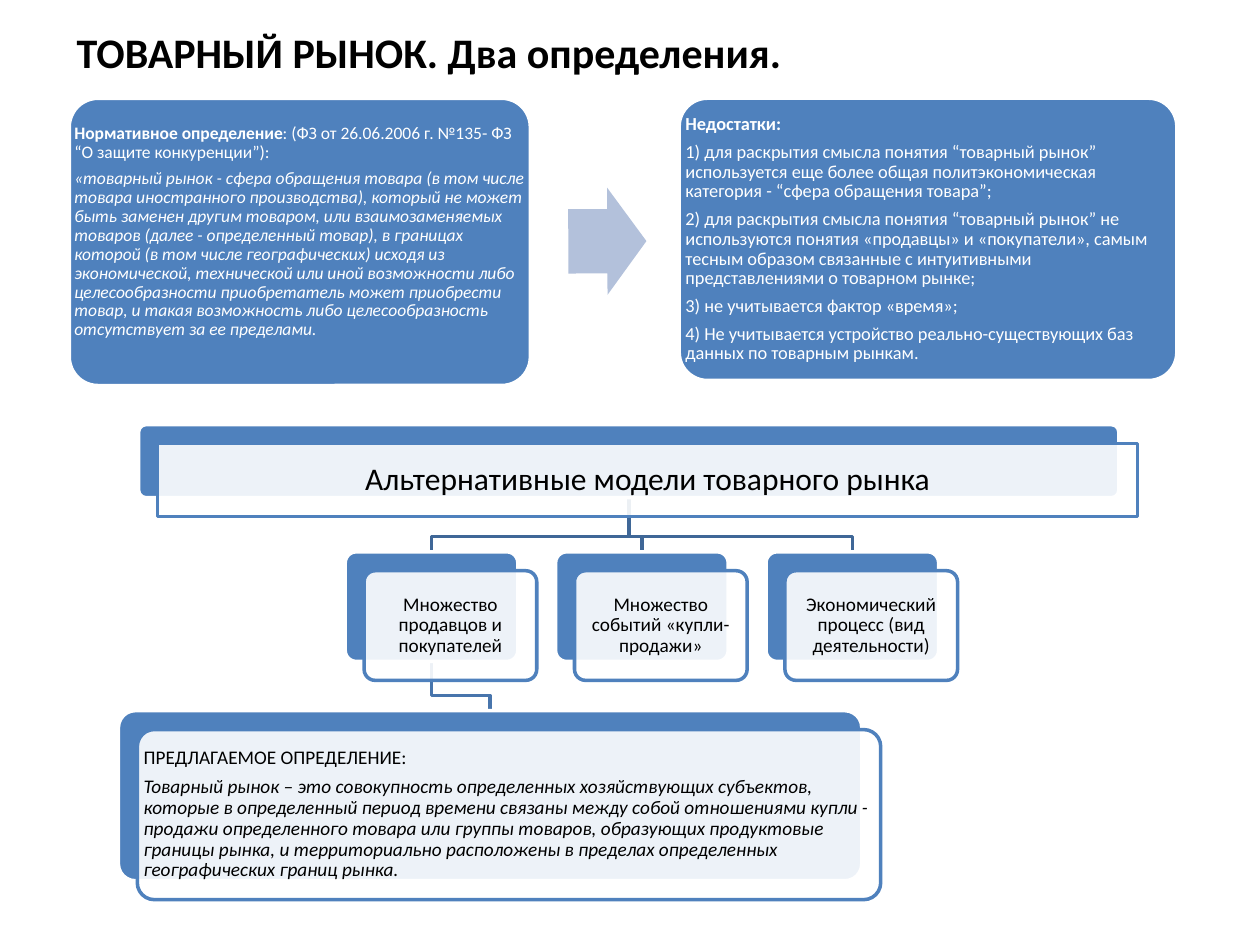
from lxml import etree
from pptx import Presentation
from pptx.dml.color import RGBColor
from pptx.enum.shapes import MSO_SHAPE as SHAPE
from pptx.enum.text import MSO_ANCHOR as ANCHOR, PP_ALIGN as ALIGN
from pptx.oxml.ns import qn
from pptx.util import Inches, Pt

BLUE, WHITE, BLACK = "4F81BD", "FFFFFF", "000000"
ARROW, BRANCH, SUBBRANCH = "B3C1DB", "3F6797", "4875AC"
OFFSET = 0.15  # shift of a card's front plate from its back plate

NORM = [
    [("Нормативное определение", "b"),
     (": (ФЗ от 26.06.2006 г. №135- ФЗ “О защите конкуренции”):", "")],
    [("«товарный рынок - сфера обращения товара (в том числе товара иностранного "
      "производства), который не может быть заменен другим товаром, или "
      "взаимозаменяемых товаров (далее - определенный товар), в границах которой "
      "(в том числе географических) исходя из экономической, технической или иной "
      "возможности либо целесообразности приобретатель может приобрести товар, и "
      "такая возможность либо целесообразность отсутствует за ее пределами.", "i")],
]
FLAWS = [
    [("Недостатки:", "b")],
    [("1) для раскрытия смысла понятия “товарный рынок” используется еще более "
      "общая политэкономическая категория - “сфера обращения товара”;", "")],
    [("2) для раскрытия смысла понятия “товарный рынок” не используются понятия "
      "«продавцы» и «покупатели», самым тесным образом связанные с интуитивными "
      "представлениями о товарном рынке;", "")],
    [("3) не учитывается фактор «время»;", "")],
    [("4) Не учитывается устройство реально-существующих баз данных по товарным "
      "рынкам.", "")],
]
MODELS = ["Множество продавцов и покупателей",
          "Множество событий «купли-продажи»",
          "Экономический процесс (вид деятельности)"]
PROPOSAL = [
    [("ПРЕДЛАГАЕМОЕ ОПРЕДЕЛЕНИЕ:", "")],
    [("Товарный рынок – это совокупность определенных хозяйствующих субъектов, "
      "которые в определенный период времени связаны между собой отношениями купли "
      "- продажи определенного товара или группы товаров, образующих продуктовые "
      "границы рынка, и территориально расположены в пределах определенных "
      "географических границ рынка.", "i")],
]


def rgb(value):
    return RGBColor.from_string(value)


def add_plate(s, box, fill, line=None, kind=SHAPE.ROUNDED_RECTANGLE, alpha=None):
    """Filled shape; alpha is the opacity in percent."""
    sp = s.shapes.add_shape(kind, *map(Inches, box))
    sp.shadow.inherit = False
    if kind == SHAPE.ROUNDED_RECTANGLE:
        sp.adjustments[0] = 0.1
    sp.fill.solid()
    sp.fill.fore_color.rgb = rgb(fill)
    if alpha:
        clr = sp._element.spPr.find(qn("a:solidFill")).find(qn("a:srgbClr"))
        etree.SubElement(clr, qn("a:alpha")).set("val", str(alpha * 1000))
    if line:
        sp.line.color.rgb = rgb(line)
        sp.line.width = Pt(2)
    else:
        sp.line.fill.background()
    return sp


def add_text(s, box, paragraphs, size, color=BLACK, inset=0.05, bottom=None,
             align=ALIGN.LEFT):
    """Paragraphs are lists of (text, style), style holding b and/or i."""
    tf = s.shapes.add_textbox(*map(Inches, box)).text_frame
    tf.word_wrap = True
    tf.vertical_anchor = ANCHOR.MIDDLE
    tf.margin_left = tf.margin_right = tf.margin_top = Inches(inset)
    tf.margin_bottom = Inches(bottom or inset)
    for i, runs in enumerate(paragraphs):
        p = tf.paragraphs[0] if i == 0 else tf.add_paragraph()
        p.alignment = align
        p.line_spacing = 0.9
        p.space_after = Pt(round(size * 0.42, 1))
        p.font.name, p.font.size = "Calibri", Pt(size)
        p.font.color.rgb = rgb(color)
        for text, style in runs:
            r = p.add_run()
            r.text = text
            r.font.bold, r.font.italic = "b" in style, "i" in style


def add_card(s, box, paragraphs, size, front=SHAPE.ROUNDED_RECTANGLE,
             inset=0.05, align=ALIGN.CENTER):
    """Blue back plate with a shifted translucent front plate and its text."""
    x, y, w, h = box
    front_box = (x + OFFSET, y + OFFSET, w, h)
    add_plate(s, box, BLUE, WHITE)
    add_plate(s, front_box, WHITE, BLUE, front, alpha=90)
    add_text(s, front_box, paragraphs, size, inset=inset, align=align)


def add_branch(s, start, end, color):
    """Elbow line that bends 0.12 in above its end."""
    (x1, y1), (x2, y2) = start, end
    bend = y2 - 0.12
    fb = s.shapes.build_freeform(Inches(x1), Inches(y1))
    fb.add_line_segments([(Inches(x), Inches(y)) for x, y in
                          ((x1, bend), (x2, bend), (x2, y2))], close=False)
    sp = fb.convert_to_shape()
    sp.shadow.inherit = False
    sp.fill.background()
    sp.line.color.rgb = rgb(color)
    sp.line.width = Pt(2)


def add_definitions(s):
    norm, flaws = (0.55, 0.78, 3.66, 2.28), (5.39, 0.78, 3.95, 2.24)
    add_plate(s, norm, BLUE, WHITE)
    add_text(s, norm, NORM, 10, WHITE, inset=0.04, bottom=0.2)
    arrow = add_plate(s, (4.51, 1.49, 0.62, 0.85), ARROW, kind=SHAPE.RIGHT_ARROW)
    arrow.adjustments[0] = 0.6
    arrow.rotation = -0.2
    add_plate(s, flaws, BLUE, WHITE)
    add_text(s, flaws, FLAWS, 10.5, WHITE)


def add_model_tree(s):
    root = (1.1, 3.37, 7.78, 0.58)
    proposal = (0.94, 5.64, 5.9, 1.35)
    top, width, height, step = 4.38, 1.37, 0.87, 1.67
    lefts = [2.74 + step * i for i in range(len(MODELS))]

    root_foot = (root[0] + root[2] / 2, root[1] + root[3])
    for left in lefts:
        add_branch(s, root_foot, (left + width / 2, top), BRANCH)
    add_branch(s, (lefts[0] + width / 2, top + height),
               (proposal[0] + proposal[2] / 2, proposal[1]), SUBBRANCH)

    add_card(s, root, [[("Альтернативные модели товарного рынка", "")]], 18,
             front=SHAPE.RECTANGLE, inset=0.07)
    for left, text in zip(lefts, MODELS):
        add_card(s, (left, top, width, height), [[(text, "")]], 11)
    add_card(s, proposal, PROPOSAL, 11, align=ALIGN.LEFT)


def add_title(s, text):
    tf = s.shapes.add_textbox(Inches(0.51), Inches(0.21), Inches(9), Inches(0.4)).text_frame
    tf.word_wrap = True
    tf.vertical_anchor = ANCHOR.MIDDLE
    p = tf.paragraphs[0]
    p.text = text
    p.font.name, p.font.size, p.font.bold = "Calibri", Pt(24), True
    p.font.color.rgb = rgb(BLACK)


def main():
    prs = Presentation()
    prs.slide_width, prs.slide_height = Inches(10), Inches(7.5)
    s = prs.slides.add_slide(prs.slide_layouts[6])
    add_title(s, "ТОВАРНЫЙ РЫНОК. Два определения.")
    add_definitions(s)
    add_model_tree(s)
    prs.save("out.pptx")


if __name__ == "__main__":
    main()
